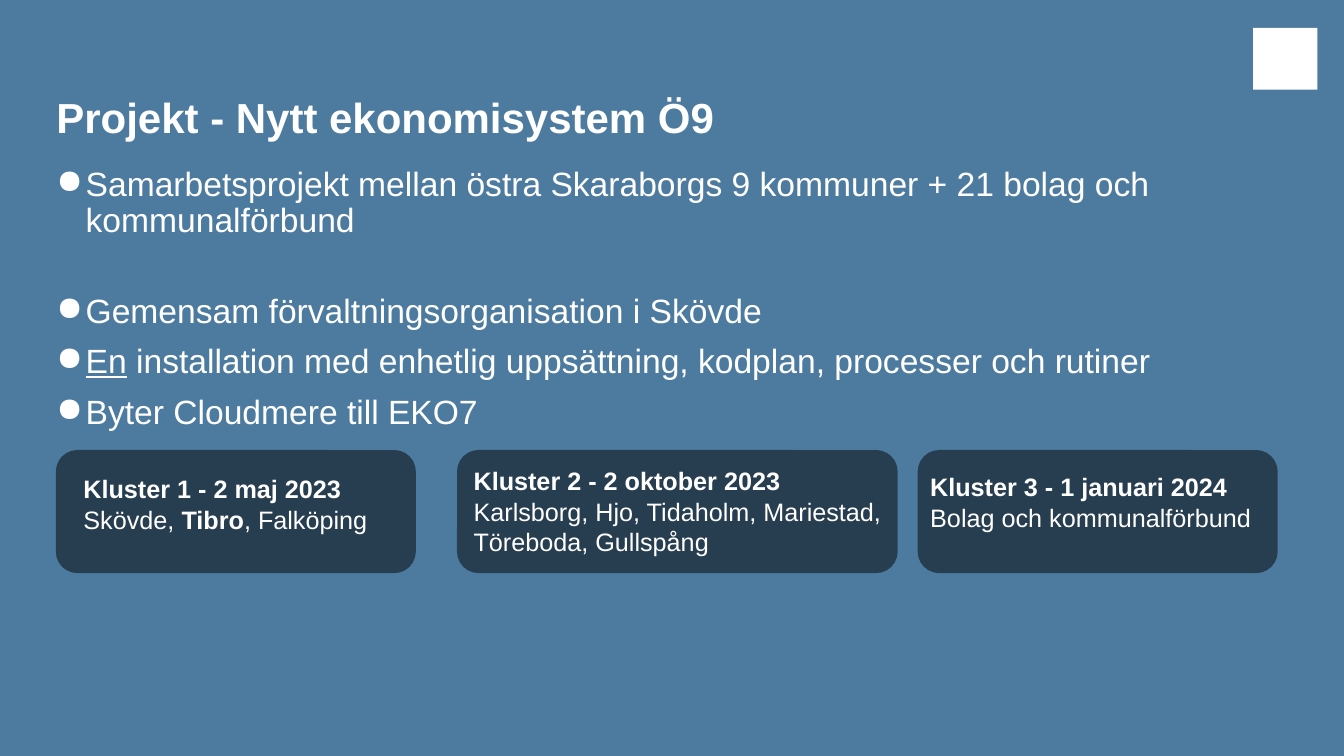
import pptx
import pptx.util
import pptx.dml.color
import pptx.enum.shapes
import pptx.enum.text
import pptx.oxml.ns
import lxml.etree

Pt = pptx.util.Pt
BACKGROUND = "4D7BA0"
CARD = "273D50"
WHITE = "FFFFFF"
MARGIN = 40.32
CARD_TOP, CARD_HEIGHT = 322.56, 85.68
BULLET_INDENT = 20.88

# Each bullet: space before, then (text, underlined) runs
BULLETS = [
    (0, [("Samarbetsprojekt mellan östra Skaraborgs 9 kommuner + 21 bolag och "
          "kommunalförbund", False)]),
    (39, [("Gemensam förvaltningsorganisation i Skövde", False)]),
    (10, [("En", True),
          (" installation med enhetlig uppsättning, kodplan, processer och rutiner", False)]),
    (10, [("Byter Cloudmere till EKO7", False)]),
]

# Each cluster: card left and width, text box, heading, (text, bold) members
CLUSTERS = [
    (41.04, 254.88, (52.56, 334.8, 220.32, 51.12), "Kluster 1 - 2 maj 2023",
     [("Skövde, ", False), ("Tibro", True), (", Falköping", False)]),
    (327.6, 312.48, (331.2, 329.04, 308.16, 72.72), "Kluster 2 - 2 oktober 2023",
     [("Karlsborg, Hjo, Tidaholm, Mariestad, Töreboda, Gullspång", False)]),
    (656.64, 254.88, (657.36, 333.36, 244.08, 51.12), "Kluster 3 - 1 januari 2024",
     [("Bolag och kommunalförbund", False)]),
]


def color(hex_value):
    return pptx.dml.color.RGBColor.from_string(hex_value)


def add_block(slide, kind, left, top, width, height, fill):
    block = slide.shapes.add_shape(kind, Pt(left), Pt(top), Pt(width), Pt(height))
    block.shadow.inherit = False
    block.fill.solid()
    block.fill.fore_color.rgb = color(fill)
    block.line.color.rgb = color(fill)
    block.line.width = Pt(2.25)
    return block


def add_text_frame(slide, left, top, width, height, inset=True):
    frame = slide.shapes.add_textbox(Pt(left), Pt(top), Pt(width), Pt(height)).text_frame
    frame.word_wrap = True
    if not inset:
        frame.margin_left = frame.margin_right = 0
        frame.margin_top = frame.margin_bottom = 0
    return frame


def add_run(paragraph, text, size, bold=False, underline=False):
    run = paragraph.add_run()
    run.text = text
    run.font.name = "Arial"
    run.font.size = Pt(size)
    run.font.bold = bold
    run.font.underline = underline
    run.font.color.rgb = color(WHITE)


def next_paragraph(frame, index):
    return frame.paragraphs[0] if index == 0 else frame.add_paragraph()


def set_bullet(paragraph):
    properties = paragraph._p.get_or_add_pPr()
    properties.set("marL", str(Pt(BULLET_INDENT)))
    properties.set("indent", str(-Pt(BULLET_INDENT)))
    bullet = lxml.etree.SubElement(properties, pptx.oxml.ns.qn("a:buChar"))
    bullet.set("char", "●")


def add_title(slide, text):
    frame = add_text_frame(slide, MARGIN, 17.28, 683.28, 84.24, inset=False)
    frame.vertical_anchor = pptx.enum.text.MSO_ANCHOR.BOTTOM
    frame.paragraphs[0].line_spacing = 0.9
    add_run(frame.paragraphs[0], text, 30, bold=True)


def add_bullets(slide, bullets):
    frame = add_text_frame(slide, MARGIN, 119.52, 848.16, 192.24, inset=False)
    for index, (space_before, runs) in enumerate(bullets):
        paragraph = next_paragraph(frame, index)
        set_bullet(paragraph)
        paragraph.line_spacing = 0.9
        if space_before:
            paragraph.space_before = Pt(space_before)
        for text, underline in runs:
            add_run(paragraph, text, 24, underline=underline)


def add_cluster(slide, left, width, text_box, heading, members):
    add_block(slide, pptx.enum.shapes.MSO_SHAPE.ROUNDED_RECTANGLE,
              left, CARD_TOP, width, CARD_HEIGHT, CARD)
    frame = add_text_frame(slide, *text_box)
    for index, runs in enumerate([[(heading, True)], members]):
        paragraph = next_paragraph(frame, index)
        for text, bold in runs:
            add_run(paragraph, text, 18, bold=bold)


def main():
    deck = pptx.Presentation()
    deck.slide_width, deck.slide_height = Pt(960), Pt(540)
    slide = deck.slides.add_slide(deck.slide_layouts[6])
    slide.background.fill.solid()
    slide.background.fill.fore_color.rgb = color(BACKGROUND)

    # Plain corner mark
    mark = add_block(slide, pptx.enum.shapes.MSO_SHAPE.RECTANGLE, 895, 20, 46, 44, WHITE)
    mark.line.fill.background()

    # Heading and key points
    add_title(slide, "Projekt - Nytt ekonomisystem Ö9")
    add_bullets(slide, BULLETS)

    # Rollout clusters
    for cluster in CLUSTERS:
        add_cluster(slide, *cluster)

    deck.save("out.pptx")


if __name__ == "__main__":
    main()
